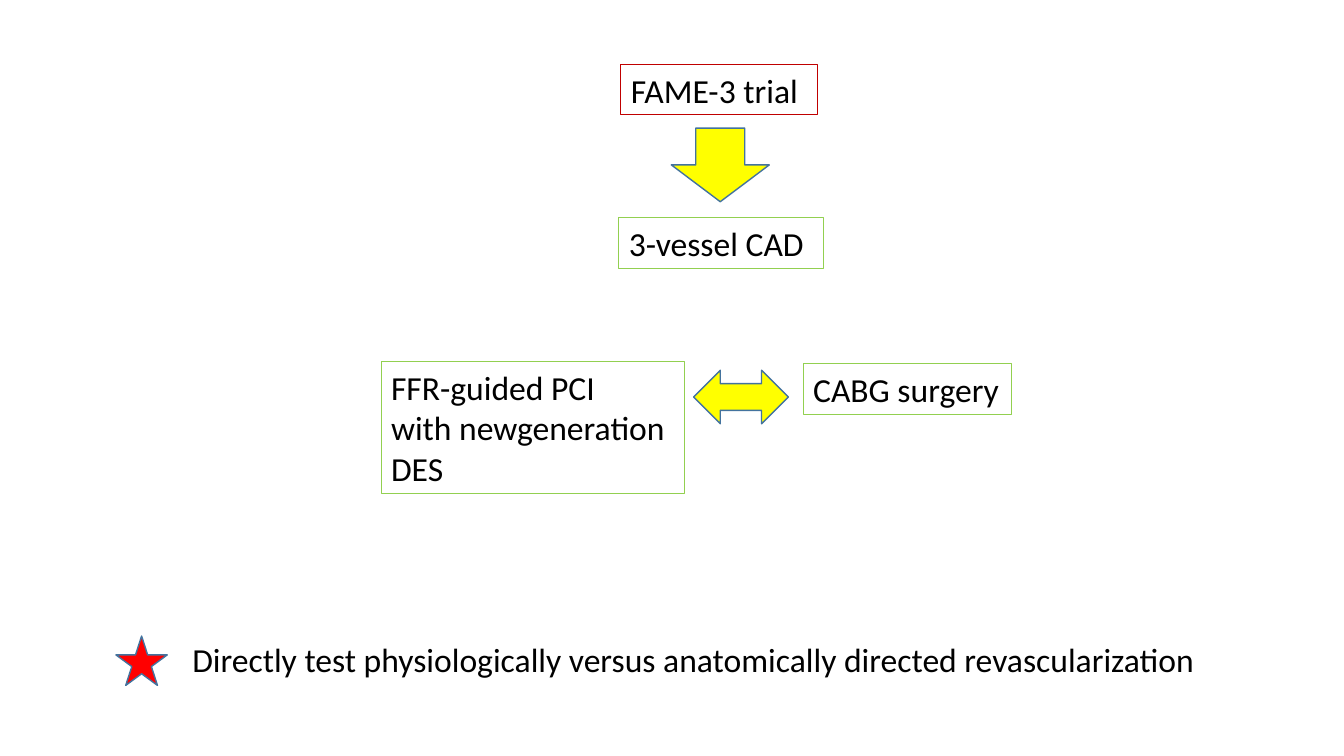
from pptx import Presentation
from pptx.dml.color import RGBColor
from pptx.enum.shapes import MSO_SHAPE
from pptx.util import Pt

BLACK = RGBColor(0x00, 0x00, 0x00)
RED = RGBColor(0xFF, 0x00, 0x00)
CRIMSON = RGBColor(0xC0, 0x00, 0x00)
GREEN = RGBColor(0x92, 0xD0, 0x50)
YELLOW = RGBColor(0xFF, 0xFF, 0x00)
BLUE = RGBColor(0x43, 0x73, 0x9E)
FONT = {"name": "Calibri", "size": Pt(24)}


def label(slide, box, lines, edge=None):
    """Place a text box with one paragraph per line and an optional outline."""
    shape = slide.shapes.add_textbox(*map(Pt, box))
    if edge is not None:
        shape.line.color.rgb = edge
        shape.line.width = Pt(0.75)
    frame = shape.text_frame
    frame.word_wrap = True
    frame.text = "\n".join(lines)
    for para in frame.paragraphs:
        for key, value in FONT.items():
            setattr(para.font, key, value)
        para.font.color.rgb = BLACK


def symbol(slide, box, kind, fill):
    """Place a filled preset shape with a thin blue outline."""
    shape = slide.shapes.add_shape(kind, *map(Pt, box))
    shape.shadow.inherit = False
    shape.fill.solid()
    shape.fill.fore_color.rgb = fill
    shape.line.color.rgb = BLUE
    shape.line.width = Pt(1)


def trial(slide, box):
    """Stack the trial name, a down arrow and the patient group."""
    left, top, width, height = box
    label(slide, (left + 1.4, top, width - 5.8, 36), ["FAME-3 trial"], CRIMSON)
    symbol(slide, (left + 37.4, top + 45.4, 70, 52.6), MSO_SHAPE.DOWN_ARROW, YELLOW)
    label(slide, (left, top + height - 36, width, 36), ["3-vessel CAD"], GREEN)


def arms(slide, box):
    """Set the two treatments side by side with a double arrow between."""
    left, top, width, height = box
    label(slide, (left, top, 216.7, height),
          ["FFR-guided PCI", "with newgeneration DES"], GREEN)
    symbol(slide, (left + 223.2, top + 6, 67.7, 38.2),
           MSO_SHAPE.LEFT_RIGHT_ARROW, YELLOW)
    label(slide, (left + width - 148.5, top + 1.5, 148.5, 36), ["CABG surgery"], GREEN)


def note(slide, box):
    """Lay out the star and the closing statement."""
    left, top, width, height = box
    symbol(slide, (left, top + 1.4, 36.7, 35.3), MSO_SHAPE.STAR_5_POINT, RED)
    label(slide, (left + 47.5, top, width - 47.5, height),
          ["Directly test physiologically versus anatomically directed revascularization"])


def main():
    """Build and save the slide."""
    deck = Presentation()
    deck.slide_width, deck.slide_height = Pt(960), Pt(540)
    slide = deck.slides.add_slide(deck.slide_layouts[6])
    trial(slide, (442.1, 46.1, 146.2, 145.4))
    arms(slide, (272.2, 258.5, 450, 94.3))
    note(slide, (82.8, 452.9, 864, 36))
    deck.save("out.pptx")


if __name__ == "__main__":
    main()
